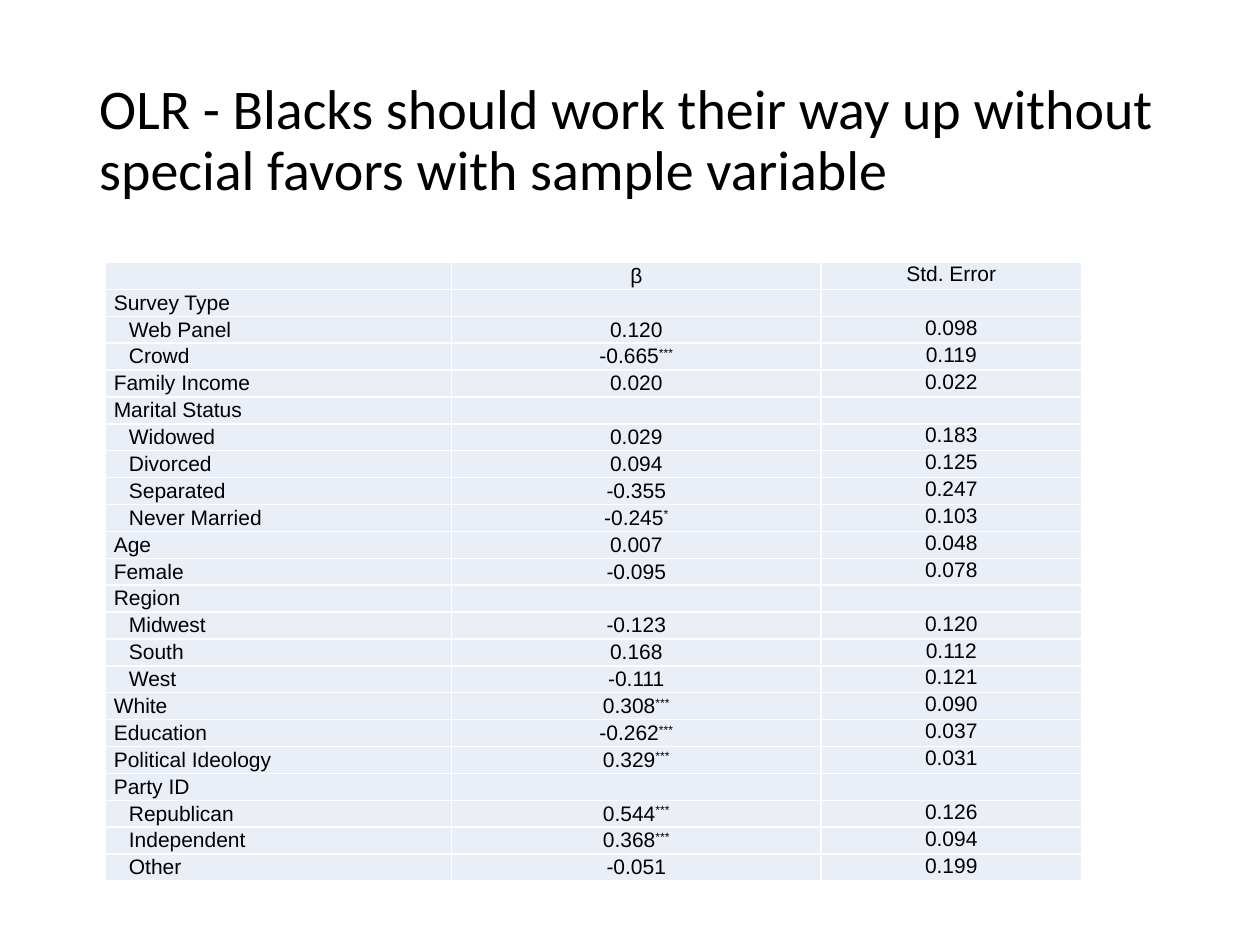
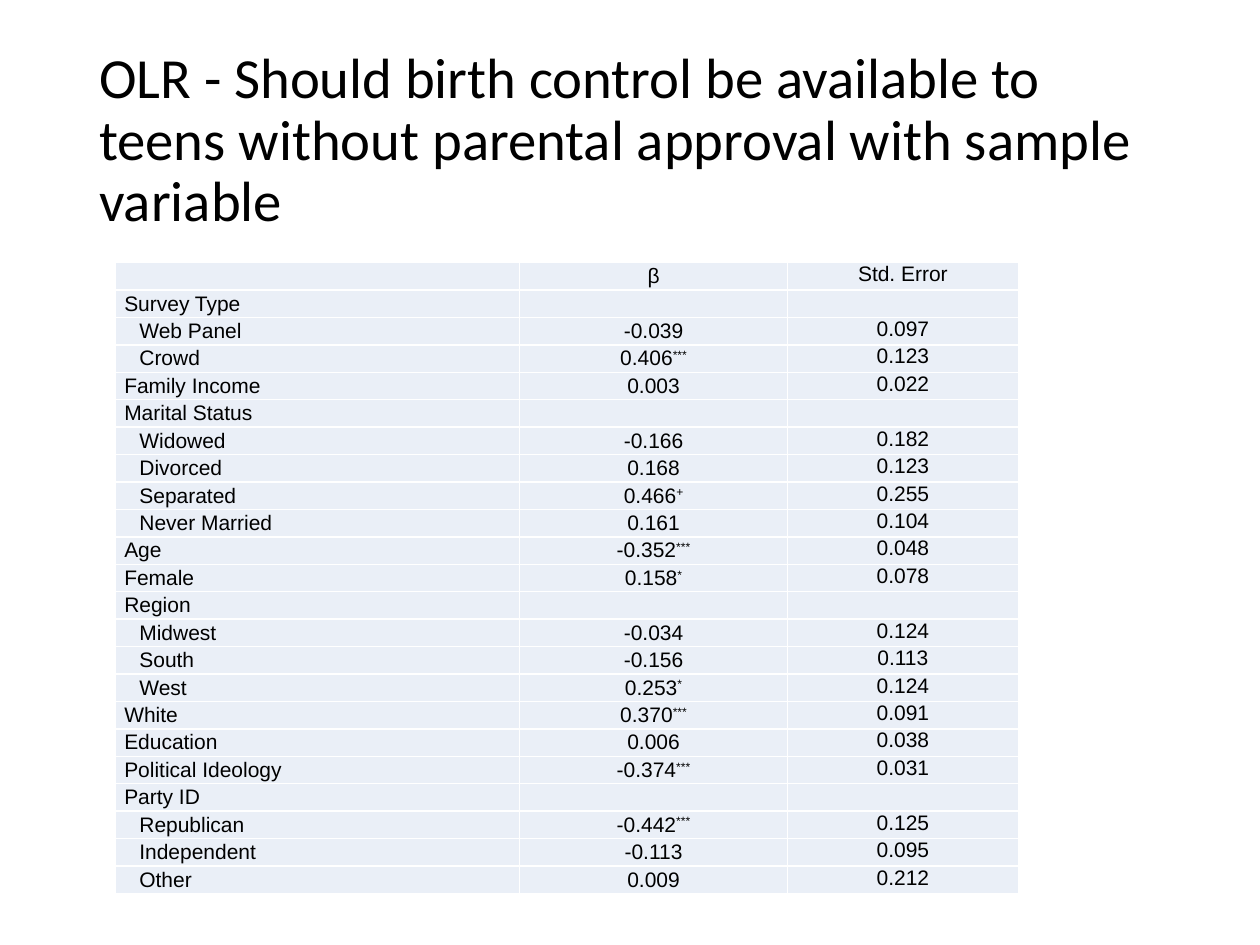
import pptx
import pptx.dml.color
import pptx.enum.text
import pptx.oxml.ns
import pptx.util
from lxml import etree

ALIGN = pptx.enum.text.PP_ALIGN
ANCHOR = pptx.enum.text.MSO_ANCHOR
BLACK, WHITE, PALE_BLUE = "000000", "FFFFFF", "EAEFF7"
TITLE_FONT, TABLE_FONT = "Calibri", "Arial"
TABLE_SIZE = 12
SIGNIFICANCE_MARKS = "*+"
COLUMNS, ROWS = 120, 90

# Each predictor: label, is it a level of the heading above, does it carry values
PREDICTORS = [
    ("Survey Type", False, False),
    ("Web Panel", True, True),
    ("Crowd", True, True),
    ("Family Income", False, True),
    ("Marital Status", False, False),
    ("Widowed", True, True),
    ("Divorced", True, True),
    ("Separated", True, True),
    ("Never Married", True, True),
    ("Age", False, True),
    ("Female", False, True),
    ("Region", False, False),
    ("Midwest", True, True),
    ("South", True, True),
    ("West", True, True),
    ("White", False, True),
    ("Education", False, True),
    ("Political Ideology", False, True),
    ("Party ID", False, False),
    ("Republican", True, True),
    ("Independent", True, True),
    ("Other", True, True),
]

WORK_ESTIMATES = [
    ("0.120", "0.098"), ("-0.665***", "0.119"), ("0.020", "0.022"),
    ("0.029", "0.183"), ("0.094", "0.125"), ("-0.355", "0.247"),
    ("-0.245*", "0.103"), ("0.007", "0.048"), ("-0.095", "0.078"),
    ("-0.123", "0.120"), ("0.168", "0.112"), ("-0.111", "0.121"),
    ("0.308***", "0.090"), ("-0.262***", "0.037"), ("0.329***", "0.031"),
    ("0.544***", "0.126"), ("0.368***", "0.094"), ("-0.051", "0.199"),
]

BIRTH_CONTROL_ESTIMATES = [
    ("-0.039", "0.097"), ("0.406***", "0.123"), ("0.003", "0.022"),
    ("-0.166", "0.182"), ("0.168", "0.123"), ("0.466+", "0.255"),
    ("0.161", "0.104"), ("-0.352***", "0.048"), ("0.158*", "0.078"),
    ("-0.034", "0.124"), ("-0.156", "0.113"), ("0.253*", "0.124"),
    ("0.370***", "0.091"), ("0.006", "0.038"), ("-0.374***", "0.031"),
    ("-0.442***", "0.125"), ("-0.113", "0.095"), ("0.009", "0.212"),
]


def paint(color_format, hex_color):
    color_format.rgb = pptx.dml.color.RGBColor.from_string(hex_color)


def write(paragraph, text, *, font=TABLE_FONT, size=TABLE_SIZE, color=BLACK,
          align=ALIGN.LEFT, indent=0, spacing=None, raised=""):
    """Fill a paragraph with text, followed by an optional superscript."""
    paragraph.alignment = align
    if spacing:
        paragraph.line_spacing = spacing
    if indent:
        margin = pptx.util.Inches(indent)
        paragraph._p.get_or_add_pPr().set("marL", str(margin))
    for part in filter(None, (text, raised)):
        run = paragraph.add_run()
        run.text = part
        run.font.name = font
        run.font.size = pptx.util.Pt(size)
        paint(run.font.color, color)
    if raised:
        run.font._element.set("baseline", "30000")
    if not text:
        # An empty cell needs its own size or it would stretch the row
        etree.SubElement(paragraph._p, pptx.oxml.ns.qn("a:endParaRPr"),
                         sz=str(size * 100))


def add_borders(cell, hex_color, points):
    properties = cell._tc.get_or_add_tcPr()
    for side in ("a:lnL", "a:lnR", "a:lnT", "a:lnB"):
        line = etree.SubElement(properties, pptx.oxml.ns.qn(side),
                                w=str(pptx.util.Pt(points)))
        fill = etree.SubElement(line, pptx.oxml.ns.qn("a:solidFill"))
        etree.SubElement(fill, pptx.oxml.ns.qn("a:srgbClr"), val=hex_color)


class RegressionDeck:
    def __init__(self):
        self.deck = pptx.Presentation()
        self.deck.slide_width = pptx.util.Inches(10)
        self.deck.slide_height = pptx.util.Inches(7.5)
        self.slide = None

    def across(self, columns):
        return round(self.deck.slide_width * columns / COLUMNS)

    def down(self, rows):
        return round(self.deck.slide_height * rows / ROWS)

    def new_slide(self):
        self.slide = self.deck.slides.add_slide(self.deck.slide_layouts[5])
        self.slide.background.fill.solid()
        paint(self.slide.background.fill.fore_color, WHITE)

    def title(self, question, size):
        heading = self.slide.shapes.title
        heading.left, heading.top = self.across(8.25), self.down(4.8)
        heading.width, heading.height = self.across(103.5), self.down(17.4)
        frame = heading.text_frame
        frame.word_wrap = True
        frame.auto_size = pptx.enum.text.MSO_AUTO_SIZE.NONE
        frame.vertical_anchor = ANCHOR.MIDDLE
        write(frame.paragraphs[0], question, font=TITLE_FONT, size=size,
              spacing=0.9)

    def cell(self, cell, text, anchor=ANCHOR.MIDDLE, **text_format):
        add_borders(cell, WHITE, 1)
        cell.fill.solid()
        paint(cell.fill.fore_color, PALE_BLUE)
        cell.margin_left = cell.margin_right = pptx.util.Inches(0.07)
        cell.margin_top = cell.margin_bottom = 0
        cell.vertical_anchor = anchor
        write(cell.text_frame.paragraphs[0], text, **text_format)

    def coefficients(self, estimates, left, widths, height):
        """Add the table of predictors, coefficients and standard errors."""
        row_count = len(PREDICTORS) + 1
        table = self.slide.shapes.add_table(
            row_count, len(widths), self.across(left), self.down(25),
            self.across(sum(widths)), self.down(height)).table
        table.first_row = table.horz_banding = False
        for column, width in zip(table.columns, widths):
            column.width = self.across(width)
        for row in table.rows:
            row.height = self.down(height / row_count)

        remaining = iter(estimates)
        lines = [("", False, "β", "Std. Error")]
        for label, is_level, has_values in PREDICTORS:
            values = next(remaining) if has_values else ("", "")
            lines.append((label, is_level, *values))
        for index, (label, is_level, beta, error) in enumerate(lines):
            number = beta.rstrip(SIGNIFICANCE_MARKS)
            self.cell(table.cell(index, 0), label,
                      indent=0.12 if is_level else 0)
            self.cell(table.cell(index, 1), number, align=ALIGN.CENTER,
                      raised=beta[len(number):])
            self.cell(table.cell(index, 2), error, anchor=ANCHOR.TOP,
                      align=ALIGN.CENTER)


def main():
    results = RegressionDeck()

    results.new_slide()
    results.title("OLR - Blacks should work their way up without special "
                  "favors with sample variable", size=32)
    results.coefficients(WORK_ESTIMATES, left=10,
                         widths=(33, 35.2, 24.8), height=59)

    results.new_slide()
    results.title("OLR - Should birth control be available to teens without "
                  "parental approval with sample variable", size=32.4)
    results.coefficients(BIRTH_CONTROL_ESTIMATES, left=11,
                         widths=(38.5, 25.5, 22), height=60.1)

    results.deck.save("out.pptx")


if __name__ == "__main__":
    main()
